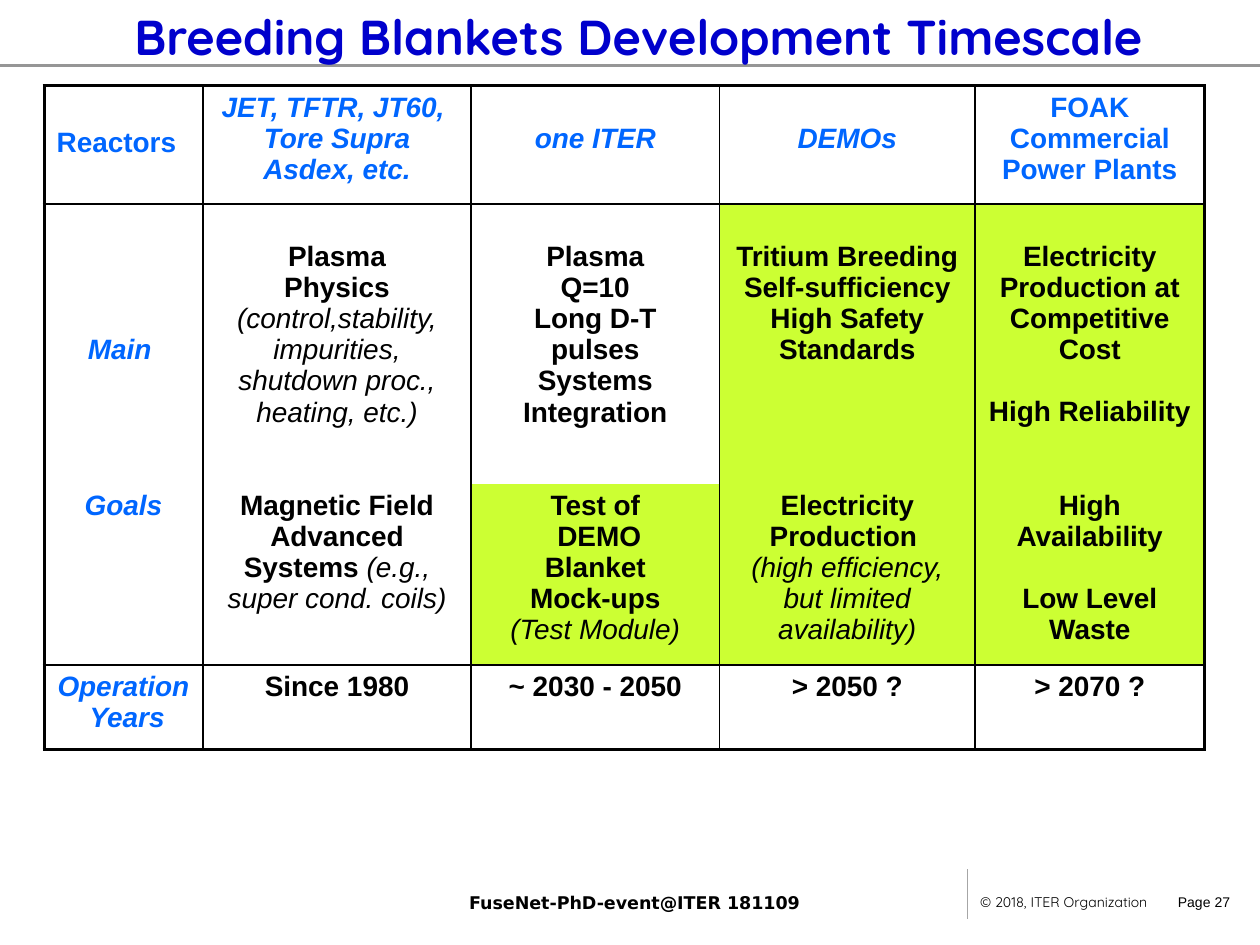
from lxml import etree
from pptx import Presentation
from pptx.dml.color import RGBColor
from pptx.enum import shapes, text
from pptx.oxml import ns
from pptx.util import Inches, Pt

HUES = {"title": "0000CC", "label": "0066FF", "ink": "000000",
        "green": "CCFF33", "rule": "969696", "tick": "A6A6A6"}
LINE = 0.246  # height of one table text line, inches

prs = Presentation()
prs.slide_width, prs.slide_height = Inches(10), Inches(7.5)
slide = prs.slides.add_slide(prs.slide_layouts[6])


def style(run, size, face, hue, bold=False, slant=False):
    font = run.font
    font.size, font.name = Pt(size), face
    font.bold, font.italic = bold, slant
    font.color.rgb = RGBColor.from_string(HUES[hue])


def border(cell, sides):
    """Give a cell its left, right, top and bottom lines in points; 0 is none."""
    props = cell._tc.get_or_add_tcPr()
    for spot, (side, width) in enumerate(zip("LRTB", sides)):
        line = etree.Element(ns.qn("a:ln" + side), w=str(Pt(width)))
        if width:
            fill = etree.SubElement(line, ns.qn("a:solidFill"))
            etree.SubElement(fill, ns.qn("a:srgbClr"), val=HUES["ink"])
        else:
            etree.SubElement(line, ns.qn("a:noFill"))
        props.insert(spot, line)


# Header rule and footer divider
for x1, y1, x2, y2, hue, width in [
    (0, 0.52, 10, 0.52, "rule", 1.25),
    (7.68, 6.9, 7.68, 7.29, "tick", 0.75),
]:
    rule = slide.shapes.add_connector(
        shapes.MSO_CONNECTOR.STRAIGHT, Inches(x1), Inches(y1), Inches(x2), Inches(y2))
    rule.line.color.rgb = RGBColor.from_string(HUES[hue])
    rule.line.width = Pt(width)
    etree.SubElement(rule._element.spPr, ns.qn("a:effectLst"))

# Title and footer
mid, left = text.PP_ALIGN.CENTER, text.PP_ALIGN.LEFT
top, half = text.MSO_ANCHOR.TOP, text.MSO_ANCHOR.MIDDLE
for words, x, y, w, h, size, face, hue, bold, align, anchor, wrap in [
    ("FuseNet-PhD-event@ITER 181109", 2.85, 7.03, 4.37, 0.27, 10,
     "DejaVu Sans", "ink", True, mid, half, True),
    ("Page 27", 9.25, 7.04, 0.64, 0.24, 8, "Arial", "ink", False, left, half, True),
    ("© 2018, ITER Organization", 7.68, 7.04, 1.65, 0.24, 8,
     "Quicksand", "ink", False, left, half, True),
    ("Breeding Blankets Development Timescale", 0.91, 0, 8.31, 0.57, 28,
     "Quicksand", "title", True, mid, top, False),
]:
    box = slide.shapes.add_textbox(Inches(x), Inches(y), Inches(w), Inches(h))
    frame = box.text_frame
    frame.word_wrap, frame.vertical_anchor = wrap, anchor
    frame.auto_size = text.MSO_AUTO_SIZE.SHAPE_TO_FIT_TEXT
    frame.text = words
    frame.paragraphs[0].alignment = align
    style(frame.paragraphs[0].runs[0], size, face, hue, bold)

# Timescale table: an empty line is a gap, text after * is light italic
goals = [
    ["Reactors", "JET, TFTR, JT60, \nTore Supra\nAsdex, etc.", "one ITER", "DEMOs",
     "FOAK Commercial\nPower Plants"],
    ["Main ",
     "Plasma\nPhysics\n*(control,stability,\n*impurities,\n*shutdown proc.,\n*heating, etc.)",
     "Plasma\nQ=10\nLong D-T\npulses\nSystems\nIntegration",
     "Tritium Breeding\nSelf-sufficiency\nHigh Safety\nStandards",
     "Electricity\nProduction at\nCompetitive\nCost\n\nHigh Reliability"],
    ["Goals", "Magnetic Field\nAdvanced\nSystems *(e.g.,\n*super cond. coils)",
     "Test of\n DEMO\nBlanket\nMock-ups\n*(Test Module)",
     "Electricity\nProduction \n*(high efficiency,\n*but limited\n*availability)",
     "High Availability\n\nLow Level\nWaste"],
    ["Operation\n Years", "Since 1980", "~ 2030 - 2050", "> 2050 ?", "> 2070 ?"],
]
# Lines left free above the text of each cell
drops = [[1.15, 0, 1, 1, 0], [4, 1, 1, 1, 1], [0] * 5, [0] * 5]
green = {(1, 3), (1, 4), (2, 2), (2, 3), (2, 4)}
wide, tall = [1.26, 2.13, 1.97, 2.03, 1.82], [0.94, 2.22, 1.44, 0.67]
edges = [2, 1, 0, 1, 2]  # line widths above, between and below the rows

table = slide.shapes.add_table(
    4, 5, Inches(0.35), Inches(0.68), Inches(sum(wide)), Inches(sum(tall))).table
table.first_row = table.horz_banding = False
for col, width in zip(table.columns, wide):
    col.width = Inches(width)
for row, height in zip(table.rows, tall):
    row.height = Inches(height)

for r, row in enumerate(goals):
    for c, words in enumerate(row):
        cell = table.cell(r, c)
        cell.margin_top = Inches(0.05 + LINE * drops[r][c])
        if (r, c) in green:
            cell.fill.solid()
            cell.fill.fore_color.rgb = RGBColor.from_string(HUES["green"])
        else:
            cell.fill.background()
        border(cell, (2 if c == 0 else 1, 2 if c == 4 else 1, edges[r], edges[r + 1]))
        hue = "label" if r == 0 or c == 0 else "ink"
        slant = hue == "label" and (r, c) not in {(0, 0), (0, 4)}
        para, gap = cell.text_frame.paragraphs[0], False
        for n, line in enumerate(words.split("\n")):
            if not line:
                gap = True
                continue
            if n:
                para = cell.text_frame.add_paragraph()
            para.alignment = left if (r, c) == (0, 0) else mid
            if gap:
                para.space_before, gap = Inches(LINE), False
            for light, part in enumerate(line.split("*")):
                if part:
                    run = para.add_run()
                    run.text = part
                    style(run, 16, "Arial", hue, not light, slant or bool(light))

prs.save("out.pptx")
